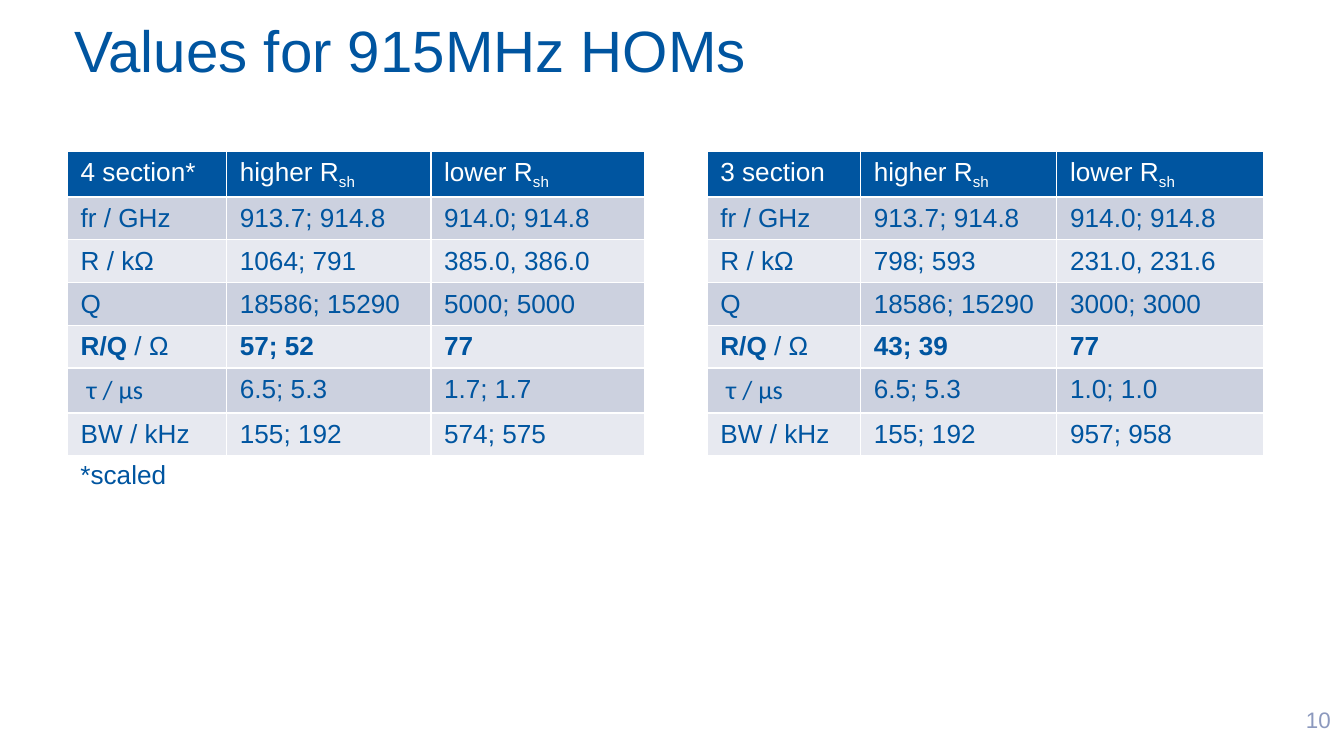
from lxml.etree import SubElement
from pptx import Presentation
from pptx.dml.color import RGBColor
from pptx.enum.text import MSO_ANCHOR as Anchor, PP_ALIGN as Align
from pptx.oxml.ns import qn
from pptx.util import Cm, Pt

BLUE = RGBColor(0x00, 0x55, 0xA0)
PALE_BLUE = RGBColor(0x8C, 0x99, 0xBE)
WHITE = RGBColor(0xFF, 0xFF, 0xFF)
BANDS = (RGBColor(0xCC, 0xD1, 0xDF), RGBColor(0xE7, 0xE9, 0xF0))

BOLD, SUB = "bold", "sub"
ROW_HEIGHTS = (0.87, 0.81, 0.81, 0.81, 0.81, 0.85, 0.81)


def style_span(span, size, color, font="Arial", style=None):
    span.font.size = Pt(size)
    span.font.name = font
    span.font.color.rgb = color
    if style == BOLD:
        span.font.bold = True
    elif style == SUB:
        span.font._element.set("baseline", "-25000")


def add_label(page, box, text, size, color, align=Align.LEFT,
              anchor=Anchor.MIDDLE, margin=0.25, wrap=True):
    shape = page.shapes.add_textbox(*map(Cm, box))
    frame = shape.text_frame
    frame.word_wrap = wrap
    frame.vertical_anchor = anchor
    frame.margin_left = frame.margin_right = Cm(margin)
    frame.margin_top = frame.margin_bottom = Cm(0.13)
    frame.text = text
    para = frame.paragraphs[0]
    para.alignment = align
    style_span(para.runs[0], size, color)


def add_borders(cell):
    properties = cell._tc.get_or_add_tcPr()
    for side in ("lnL", "lnR", "lnT", "lnB"):
        line = SubElement(properties, qn(f"a:{side}"), w=str(Pt(1)))
        fill = SubElement(line, qn("a:solidFill"))
        SubElement(fill, qn("a:srgbClr"), val=str(WHITE))


def fill_cell(cell, content, fill, color):
    """Content is plain text, or a list of (text, style) spans."""
    add_borders(cell)
    cell.fill.solid()
    cell.fill.fore_color.rgb = fill
    # A small bottom margin keeps the text from stretching the row.
    cell.margin_top, cell.margin_bottom = Cm(0.13), Cm(0.04)
    spans = [(content, None)] if isinstance(content, str) else content
    para = cell.text_frame.paragraphs[0]
    for text, style in spans:
        span = para.add_run()
        span.text = text
        font = "Calibri" if "τ" in text else "Arial"
        style_span(span, 14, color, font, style)


def add_mode_table(page, left, top, widths, name, values):
    """Table of cavity mode values; values holds (higher, lower) per row."""
    labels = ["fr / GHz", "R / kΩ", "Q", [("R/Q", BOLD), (" / Ω", None)],
              " τ / μs", "BW / kHz"]
    header = [name] + [[(f"{level} R", None), ("sh", SUB)]
                       for level in ("higher", "lower")]
    rows = [header] + [[label, *pair] for label, pair in zip(labels, values)]

    frame = page.shapes.add_table(len(rows), len(widths), Cm(left), Cm(top),
                                  Cm(sum(widths)), Cm(sum(ROW_HEIGHTS)))
    table = frame.table
    for column, width in zip(table.columns, widths):
        column.width = Cm(width)
    for i, (row, height) in enumerate(zip(rows, ROW_HEIGHTS)):
        table.rows[i].height = Cm(height)
        fill, color = (BANDS[(i - 1) % 2], BLUE) if i else (BLUE, WHITE)
        for j, content in enumerate(row):
            fill_cell(table.cell(i, j), content, fill, color)


def add_values_page(deck):
    page = deck.slides.add_slide(deck.slide_layouts[6])
    add_label(page, (24, 13.23, 1.4, 0.76), "10", 12, PALE_BLUE, Align.RIGHT)
    add_label(page, (1.27, 0.15, 22.86, 1.55), "Values for 915MHz HOMs",
              31.2, BLUE, margin=0.13)
    frequencies = ("913.7; 914.8", "914.0; 914.8")
    add_mode_table(page, 13.36, 2.85, (2.9, 3.71, 3.91), "3 section", [
        frequencies,
        ("798; 593", "231.0, 231.6"),
        ("18586; 15290", "3000; 3000"),
        ([("43; 39", BOLD)], [("77", BOLD)]),
        ("6.5; 5.3", "1.0; 1.0"),
        ("155; 192", "957; 958"),
    ])
    add_mode_table(page, 1.27, 2.85, (3.01, 3.86, 4.05), "4 section*", [
        frequencies,
        ("1064; 791", "385.0, 386.0"),
        ("18586; 15290", "5000; 5000"),
        ([("57; 52", BOLD)], [("77", BOLD)]),
        ("6.5; 5.3", "1.7; 1.7"),
        ("155; 192", "574; 575"),
    ])
    add_label(page, (1.27, 8.53, 2.16, 0.86), "*scaled", 14, BLUE,
              anchor=Anchor.TOP, wrap=False)


def main():
    deck = Presentation()
    deck.slide_width = Cm(25.4)
    deck.slide_height = Cm(14.29)
    add_values_page(deck)
    deck.save("out.pptx")


if __name__ == "__main__":
    main()
